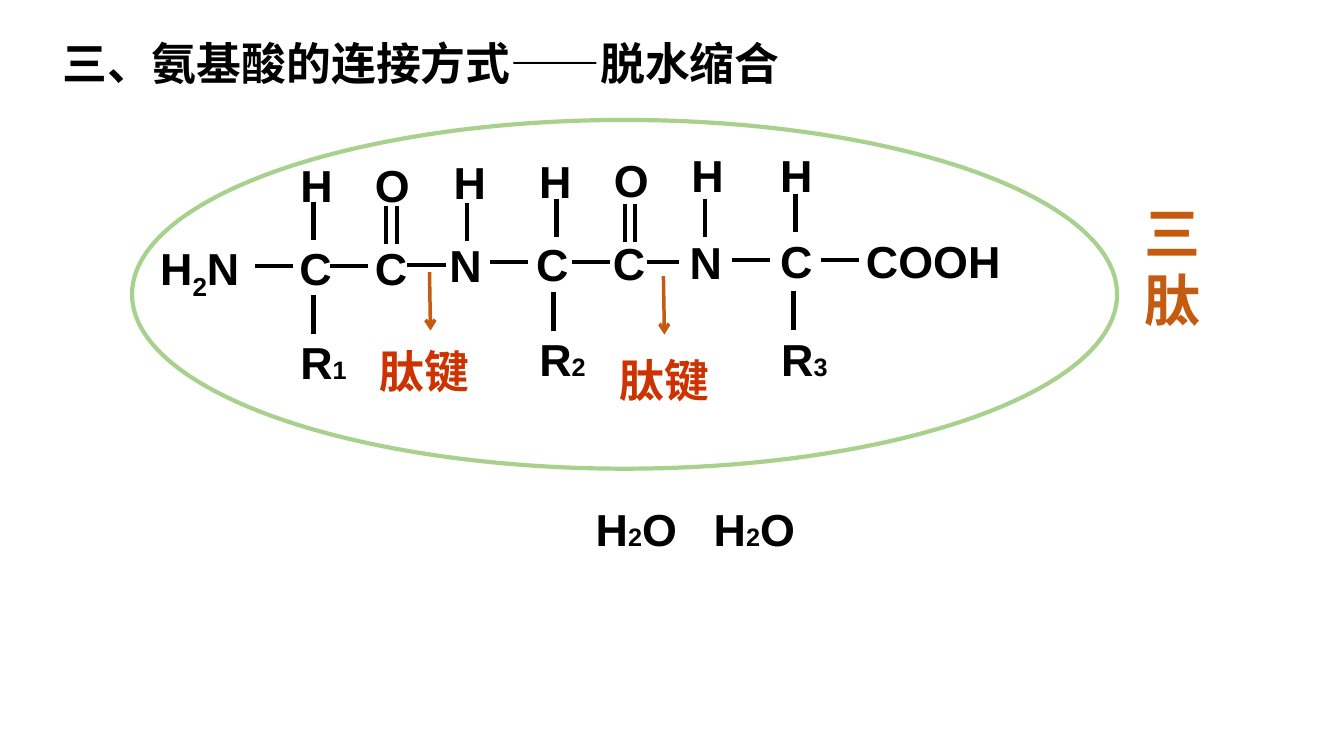
from lxml import etree
from pptx import Presentation
from pptx.dml.color import RGBColor
from pptx.enum.shapes import MSO_CONNECTOR, MSO_SHAPE
from pptx.enum.text import MSO_AUTO_SIZE
from pptx.oxml.ns import qn
from pptx.util import Inches, Pt

STRAIGHT = MSO_CONNECTOR.STRAIGHT
ELLIPSE = MSO_SHAPE.OVAL
GROW = MSO_AUTO_SIZE.SHAPE_TO_FIT_TEXT

BLACK = RGBColor(0x00, 0x00, 0x00)
RED = RGBColor(0xCC, 0x33, 0x00)
ORANGE = RGBColor(0xC5, 0x5A, 0x11)
GREEN = RGBColor(0xA9, 0xD1, 0x8E)

LATIN = "Arial"
CHINESE = "Noto Sans CJK SC"
BOND = 0.38
TEXT_HEIGHT = 0.64


class SlideBuilder:
    """Holds the text style and the slide being drawn."""

    def __init__(self, slide):
        self.slide = slide
        self.shapes = slide.shapes

    def start_group(self):
        self.shapes = self.slide.shapes.add_group_shape().shapes

    def end_group(self):
        self.shapes = self.slide.shapes

    def text(self, left, top, width, parts, height=TEXT_HEIGHT, size=32,
             color=BLACK, font=LATIN):
        """Each part is a string, or a (string, size, baseline) tuple."""
        shape = self.shapes.add_textbox(
            Inches(left), Inches(top), Inches(width), Inches(height))
        frame = shape.text_frame
        frame.word_wrap = True
        frame.auto_size = GROW
        paragraph = frame.paragraphs[0]
        paragraph.font.name = font
        paragraph.font.size = Pt(size)
        paragraph.font.bold = True
        paragraph.font.color.rgb = color
        for part in parts:
            run = paragraph.add_run()
            if isinstance(part, str):
                run.text = part
            else:
                run.text, part_size, baseline = part
                run.font.size = Pt(part_size)
                if baseline:
                    run.font._element.set("baseline", str(baseline * 1000))
            if font == CHINESE:
                east_asian = etree.SubElement(
                    run.font._element, qn("a:ea"))
                east_asian.set("typeface", font)

    def line(self, x1, y1, x2, y2, color=BLACK, weight=3, arrow=False):
        connector = self.shapes.add_connector(
            STRAIGHT, Inches(x1), Inches(y1), Inches(x2), Inches(y2))
        connector.line.color.rgb = color
        connector.line.width = Pt(weight)
        if arrow:
            tail = etree.SubElement(
                connector.line._get_or_add_ln(), qn("a:tailEnd"))
            tail.set("type", "arrow")
        etree.SubElement(connector._element.spPr, qn("a:effectLst"))

    def across(self, left, top, length=BOND):
        self.line(left, top, left + length, top)

    def down(self, left, top):
        self.line(left, top, left, top + BOND)

    def ellipse(self, left, top, width, height):
        shape = self.shapes.add_shape(
            ELLIPSE, Inches(left), Inches(top), Inches(width), Inches(height))
        shape.shadow.inherit = False
        shape.fill.background()
        shape.line.color.rgb = GREEN
        shape.line.width = Pt(3)


def main():
    presentation = Presentation()
    presentation.slide_width = Inches(13.33)
    presentation.slide_height = Inches(7.5)
    slide = presentation.slides.add_slide(presentation.slide_layouts[6])
    builder = SlideBuilder(slide)

    # Title
    builder.text(0.52, 0.31, 8.33, ["三、氨基酸的连接方式——脱水缩合"])

    # First two amino acids: atoms, then bonds
    builder.start_group()
    for atom, left, top in [
            ("H", 2.88, 1.52), ("O", 3.62, 1.52), ("H", 4.4, 1.49),
            ("H", 5.25, 1.48), ("O", 5.99, 1.47),
            ("C", 2.87, 2.34), ("C", 3.62, 2.34), ("N", 4.36, 2.31),
            ("C", 5.22, 2.3), ("C", 5.98, 2.29)]:
        builder.text(left, top, 0.6, [atom])
    builder.text(1.49, 2.34, 1.04, ["H", ("2", 32, -25), "N"])
    builder.text(2.88, 3.27, 0.85, ["R", ("1", 18, 0)])
    builder.text(5.25, 3.24, 1.09, ["R", ("2", 18, 0)])
    for left, top in [(2.53, 2.64), (3.27, 2.64), (4.04, 2.63),
                      (4.86, 2.6), (5.67, 2.6)]:
        builder.across(left, top)
    builder.across(6.42, 2.6, 0.31)
    for left, top in [(3.11, 2), (3.11, 2.93), (3.83, 2.04), (3.94, 2.04),
                      (4.63, 2.01), (5.52, 1.97), (5.49, 2.9),
                      (6.2, 2.02), (6.3, 2.02)]:
        builder.down(left, top)

    # Third amino acid
    builder.start_group()
    for atom, left, top in [("H", 6.76, 1.42), ("N", 6.74, 2.28),
                            ("H", 7.64, 1.42), ("C", 7.64, 2.27)]:
        builder.text(left, top, 0.62, [atom])
    builder.text(8.49, 2.27, 1.56, ["COOH"])
    builder.text(7.65, 3.24, 1.09, ["R", ("3", 18, 0)])
    for left in (7.26, 8.14):
        builder.across(left, 2.58)
    for left, top in [(6.99, 1.97), (7.89, 1.92), (7.87, 2.89)]:
        builder.down(left, top)
    builder.end_group()

    # Peptide bonds
    for left, top in [(3.67, 3.36), (6.05, 3.45)]:
        builder.text(left, top, 1.18, ["肽键"], color=RED, font=CHINESE)
    for left, top in [(4.26, 2.7), (6.58, 2.74)]:
        builder.line(left, top, left + 0.01, top + 0.58, ORANGE, 2.5, True)

    # Tripeptide outline and name
    builder.ellipse(1.31, 1.19, 9.77, 3.46)
    builder.text(11.25, 1.92, 1.02, ["三肽"], height=1.45, size=40,
                 color=ORANGE, font=CHINESE)

    # Released water
    for left in (5.81, 6.98):
        builder.text(left, 4.93, 1.18, ["H", ("2", 18, 0), "O"])

    presentation.save("out.pptx")


if __name__ == "__main__":
    main()
